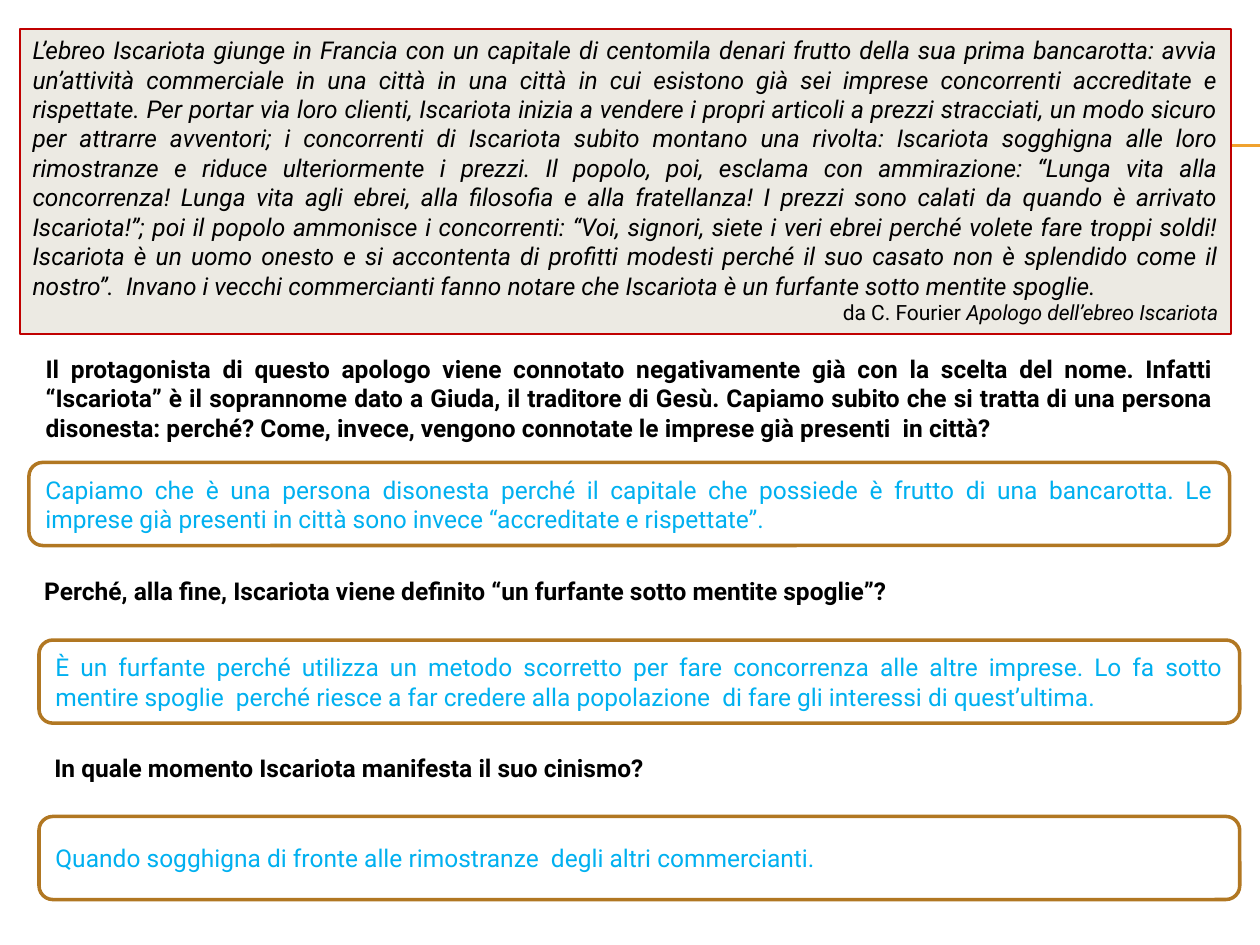
from dataclasses import dataclass

from lxml import etree
from pptx import Presentation
from pptx.dml.color import RGBColor
from pptx.enum.shapes import MSO_CONNECTOR, MSO_SHAPE as SHAPE
from pptx.enum.text import MSO_ANCHOR as ANCHOR, PP_ALIGN as ALIGN
from pptx.oxml.ns import qn
from pptx.util import Inches, Pt


@dataclass(frozen=True)
class Theme:
    font: str = "Roboto"
    text: RGBColor = RGBColor(0, 0, 0)
    answer: RGBColor = RGBColor(0x00, 0xB0, 0xF0)
    answer_fill: RGBColor = RGBColor(255, 255, 255)
    answer_line: RGBColor = RGBColor(0xB1, 0x77, 0x22)
    passage_fill: RGBColor = RGBColor(0xEC, 0xEA, 0xE3)
    passage_line: RGBColor = RGBColor(0xC0, 0, 0)
    rule: RGBColor = RGBColor(0xF0, 0xA2, 0x2E)
    body_size: Pt = Pt(14)
    source_size: Pt = Pt(12)


THEME = Theme()

PASSAGE = [
    "L’ebreo Iscariota giunge in Francia con un capitale di centomila denari frutto della sua "
    "prima bancarotta: avvia un’attività commerciale in una città in una città in cui esistono "
    "già sei imprese concorrenti accreditate e rispettate.",
    "Per portar via loro clienti, Iscariota inizia a vendere i propri articoli a prezzi stracciati, "
    "un modo sicuro per attrarre avventori; i concorrenti di Iscariota subito montano una rivolta: "
    "Iscariota sogghigna alle loro rimostranze e riduce ulteriormente i prezzi.",
    "Il popolo, poi, esclama con ammirazione: “Lunga vita alla concorrenza! Lunga vita agli ebrei, "
    "alla filosofia e alla fratellanza! I prezzi sono calati da quando è arrivato Iscariota!”; poi "
    "il popolo ammonisce i concorrenti: “Voi, signori, siete i veri ebrei perché volete fare troppi "
    "soldi!",
    "Iscariota è un uomo onesto e si accontenta di profitti modesti perché il suo casato non è "
    "splendido come il nostro”.  Invano i vecchi commercianti fanno notare che Iscariota è un "
    "furfante sotto mentite spoglie.",
]

# left, top, height, text
QUESTIONS = [
    (0.23, 2.81, 0.7,
     "Il protagonista di questo apologo viene connotato negativamente già con la scelta del nome. "
     "Infatti “Iscariota” è il soprannome dato a Giuda, il traditore di Gesù. Capiamo subito che si "
     "tratta di una persona disonesta: perché? Come, invece, vengono connotate le imprese già "
     "presenti  in città?"),
    (0.23, 4.45, 0.47,
     "Perché, alla fine, Iscariota viene definito “un furfante sotto mentite spoglie”?"),
    (0.31, 5.86, 0.47, "In quale momento Iscariota manifesta il suo cinismo?"),
]
ANSWERS = [
    (0.23, 3.67, 0.66,
     "Capiamo che è una persona disonesta perché il capitale che possiede è frutto di una "
     "bancarotta. Le imprese già presenti in città sono invece “accreditate e rispettate”."),
    (0.31, 5.08, 0.66,
     "È un furfante perché utilizza un metodo scorretto per fare concorrenza alle altre imprese. Lo "
     "fa sotto mentire spoglie  perché riesce a far credere alla popolazione  di fare gli interessi "
     "di quest’ultima."),
    (0.31, 6.48, 0.66, "Quando sogghigna di fronte alle rimostranze  degli altri commercianti."),
]
BOX_WIDTH = 9.53


def add_box(kind, left, top, width, height, anchor, fill=None, line=None, weight=0):
    """Add a shape and return its text frame; a missing fill or line stays invisible."""
    box = slide.shapes.add_shape(kind, Inches(left), Inches(top), Inches(width), Inches(height))
    box.shadow.inherit = False
    if fill is None:
        box.fill.background()
    else:
        box.fill.solid()
        box.fill.fore_color.rgb = fill
    if line is None:
        box.line.fill.background()
    else:
        box.line.color.rgb = line
        box.line.width = Pt(weight)
    box.text_frame.word_wrap = True
    box.text_frame.vertical_anchor = anchor
    return box.text_frame


def add_run(paragraph, text, size, color, bold=False, italic=False):
    run = paragraph.add_run()
    run.text = text
    font = run.font
    font.name, font.size, font.bold, font.italic = THEME.font, size, bold, italic
    font.color.rgb = color


prs = Presentation()
prs.slide_width, prs.slide_height = Inches(10), Inches(7.5)
slide = prs.slides.add_slide(prs.slide_layouts[6])

# Double rule behind the passage
for y in (1.15, 1.16):
    rule = slide.shapes.add_connector(
        MSO_CONNECTOR.STRAIGHT, Inches(0.56), Inches(y), Inches(10), Inches(y))
    rule.line.color.rgb = THEME.rule
    rule.line.width = Pt(0.75)
    etree.SubElement(rule.element.spPr, qn("a:effectLst"))

# Passage and its source
passage = add_box(SHAPE.RECTANGLE, 0.16, 0.23, 9.61, 2.42, ANCHOR.TOP,
                  THEME.passage_fill, THEME.passage_line, 1.5)
story = passage.paragraphs[0]
story.alignment = ALIGN.JUSTIFY
add_run(story, " ".join(PASSAGE), THEME.body_size, THEME.text, italic=True)
source = passage.add_paragraph()
source.alignment = ALIGN.RIGHT
source.space_after = Pt(6)
add_run(source, "da C. Fourier ", THEME.source_size, THEME.text)
add_run(source, "Apologo dell’ebreo Iscariota", THEME.source_size, THEME.text, italic=True)

# Each question is followed by its framed answer
for (q_left, q_top, q_height, question), (a_left, a_top, a_height, answer) in zip(QUESTIONS, ANSWERS):
    asked = add_box(SHAPE.ROUNDED_RECTANGLE, q_left, q_top, BOX_WIDTH, q_height,
                    ANCHOR.MIDDLE).paragraphs[0]
    asked.alignment = ALIGN.JUSTIFY
    add_run(asked, question, THEME.body_size, THEME.text, bold=True)

    replied = add_box(SHAPE.ROUNDED_RECTANGLE, a_left, a_top, BOX_WIDTH, a_height, ANCHOR.MIDDLE,
                      THEME.answer_fill, THEME.answer_line, 2).paragraphs[0]
    replied.alignment = ALIGN.JUSTIFY
    add_run(replied, answer, THEME.body_size, THEME.answer)

prs.save("out.pptx")
